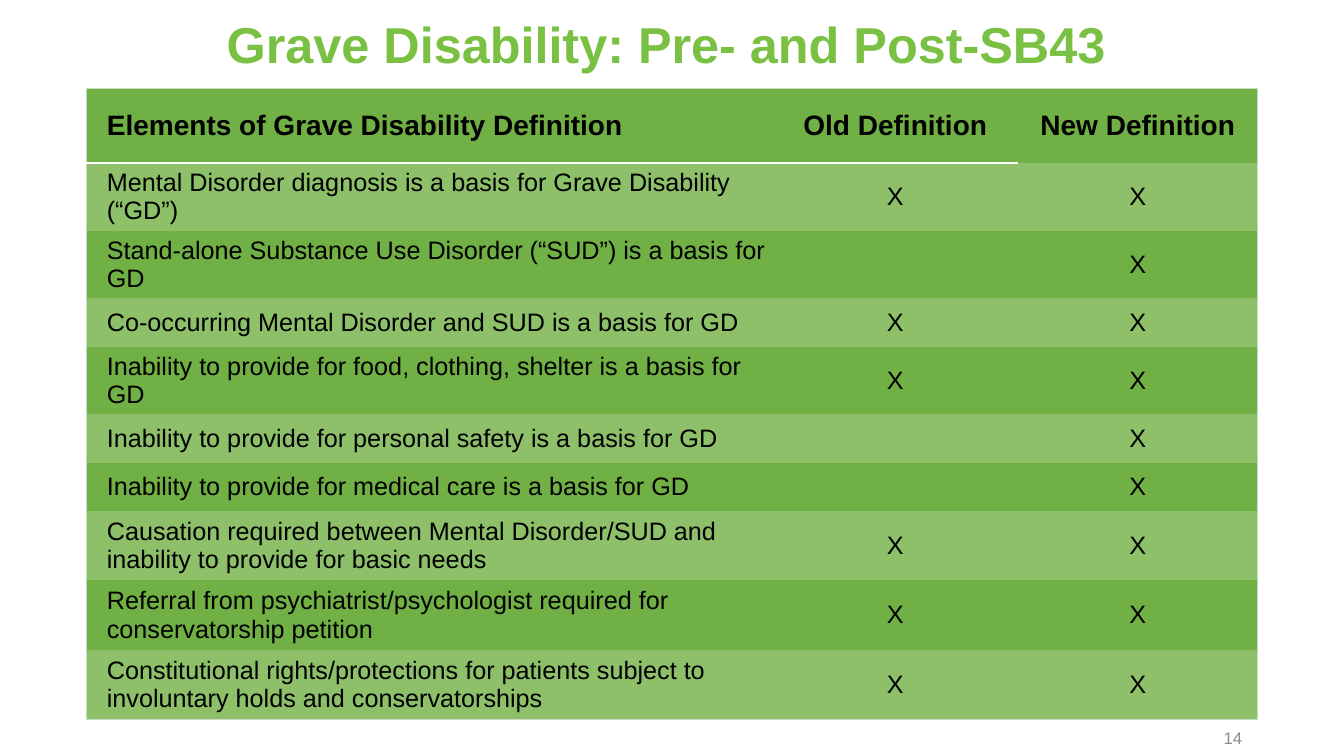
from dataclasses import dataclass

from lxml.etree import SubElement as Sub
from pptx import Presentation
from pptx.dml.color import RGBColor as RGB
from pptx.enum.text import MSO_ANCHOR as Anchor, PP_ALIGN as Align
from pptx.oxml.ns import qn
from pptx.util import Emu, Pt

PLAIN = "{2D5ABB26-0587-4C30-8999-92F81FD0307C}"


@dataclass(frozen=True)
class Theme:
    face: str = "Arial"
    title: str = "7AC143"
    dark: str = "70B044"
    light: str = "8DC069"
    edge: str = "C9DBC1"
    rule: str = "FFFFFF"
    ink: str = "000000"
    gray: str = "8C8C8C"
    big: int = 36
    head: int = 20
    body: int = 18
    small: int = 12


THEME = Theme()
COLS = (680, 244, 237)
HEADS = ("Elements of Grave Disability Definition", "Old Definition", "New Definition")
ROWS = (
    (67, "Mental Disorder diagnosis is a basis for Grave Disability (“GD”)", "X", "X"),
    (67, "Stand-alone Substance Use Disorder (“SUD”) is a basis for GD", "", "X"),
    (48, "Co-occurring Mental Disorder and SUD is a basis for GD", "X", "X"),
    (67, "Inability to provide for food, clothing, shelter is a basis for GD", "X", "X"),
    (48, "Inability to provide for personal safety is a basis for GD", "", "X"),
    (48, "Inability to provide for medical care is a basis for GD", "", "X"),
    (69, "Causation required between Mental Disorder/SUD and inability to provide for basic needs", "X", "X"),
    (69, "Referral from psychiatrist/psychologist required for conservatorship petition", "X", "X"),
    (69, "Constitutional rights/protections for patients subject to involuntary holds and conservatorships", "X", "X"),
)


def px(n):
    return Emu(n * 9144)


def style(para, size, color, align, bold=False):
    para.alignment = align
    font = para.font
    font.name, font.size, font.bold = THEME.face, Pt(size), bold
    font.color.rgb = RGB.from_string(color)


def add_title(slide, box):
    shape = slide.shapes.title
    shape.left, shape.top, shape.width, shape.height = map(px, box)
    frame = shape.text_frame
    frame.text = "Grave Disability: Pre- and Post-SB43"
    frame.vertical_anchor = Anchor.TOP
    para = frame.paragraphs[0]
    para.line_spacing = 0.9
    style(para, THEME.big, THEME.title, Align.CENTER, True)


def add_number(slide, box):
    frame = slide.shapes.add_textbox(*map(px, box)).text_frame
    frame.word_wrap = True
    frame.vertical_anchor = Anchor.MIDDLE
    frame.text = "14"
    style(frame.paragraphs[0], THEME.small, THEME.gray, Align.RIGHT)


def add_edge(cell, side, color, width):
    line = Sub(cell._tc.get_or_add_tcPr(), qn("a:ln" + side), w=str(Pt(width)))
    Sub(Sub(line, qn("a:solidFill")), qn("a:srgbClr"), val=color)


def add_edges(cell, row, col):
    thin = (THEME.edge, 0.5)
    if col == 0:
        add_edge(cell, "L", *thin)
    if col == len(COLS) - 1:
        add_edge(cell, "R", *thin)
    if row == 0:
        add_edge(cell, "T", *thin)
        if col < len(COLS) - 1:
            add_edge(cell, "B", THEME.rule, 1.5)
    if row == len(ROWS):
        add_edge(cell, "B", *thin)


def fill_cell(cell, row, col, text):
    add_edges(cell, row, col)
    cell.fill.solid()
    cell.fill.fore_color.rgb = RGB.from_string(THEME.light if row % 2 else THEME.dark)
    cell.margin_left = px(0 if col else 20)
    cell.margin_right = cell.margin_top = cell.margin_bottom = 0
    cell.vertical_anchor = Anchor.MIDDLE
    cell.text = text
    size = THEME.body if row else THEME.head
    align = Align.CENTER if col else Align.LEFT
    style(cell.text_frame.paragraphs[0], size, THEME.ink, align, row == 0)


def add_grid(slide, box):
    data = ((74, *HEADS), *ROWS)
    table = slide.shapes.add_table(len(data), len(COLS), *map(px, box)).table
    table.first_row = table.horz_banding = False
    table._tbl.tblPr.find(qn("a:tableStyleId")).text = PLAIN
    for col, width in zip(table.columns, COLS):
        col.width = px(width)
    for r, (height, *texts) in enumerate(data):
        table.rows[r].height = px(height)
        for c, text in enumerate(texts):
            fill_cell(table.cell(r, c), r, c, text)


def main():
    deck = Presentation()
    deck.slide_width, deck.slide_height = px(1333), px(750)
    slide = deck.slides.add_slide(deck.slide_layouts[5])
    add_title(slide, (86, 15, 1150, 72))
    add_number(slide, (942, 716, 300, 32))
    add_grid(slide, (86, 88, 1161, 626))
    deck.save("out.pptx")


if __name__ == "__main__":
    main()
